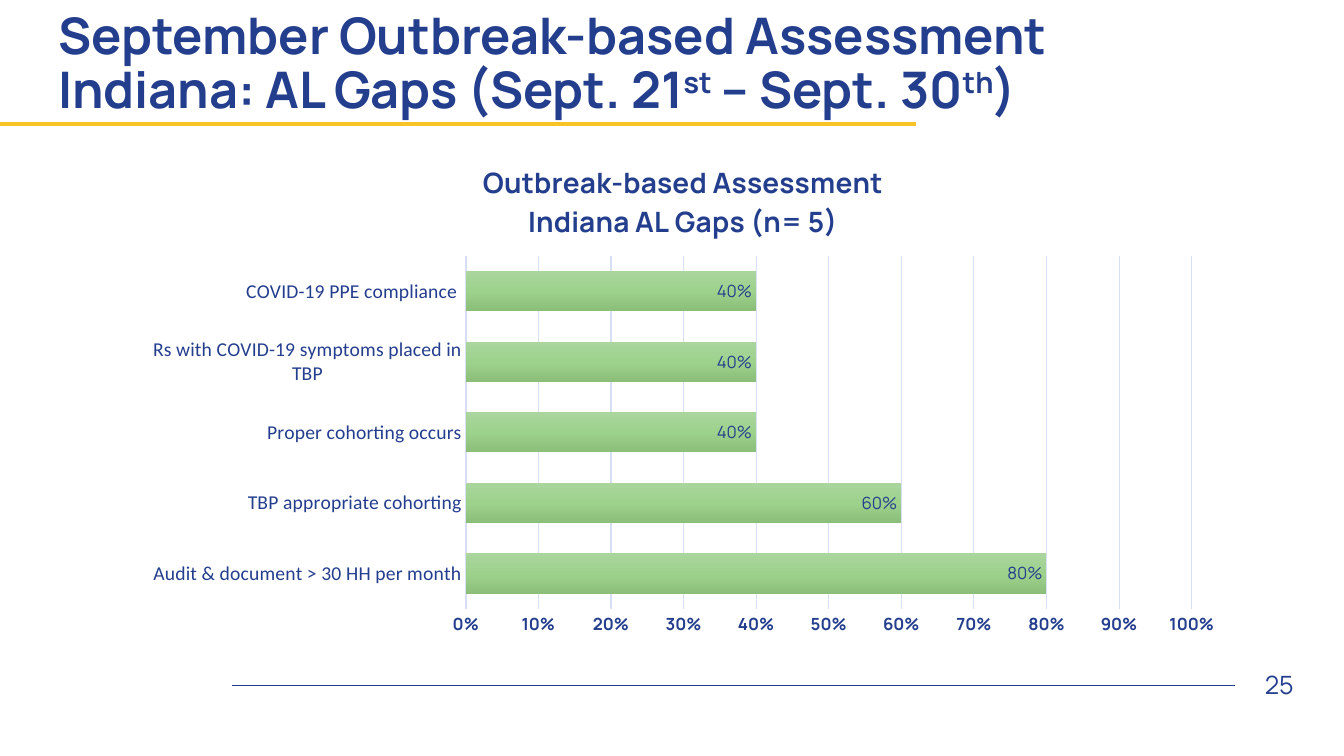
from lxml import etree
from pptx import Presentation
from pptx.chart.data import CategoryChartData
from pptx.dml.color import RGBColor
from pptx.enum.chart import XL_CHART_TYPE, XL_LABEL_POSITION, XL_TICK_MARK
from pptx.enum.shapes import MSO_CONNECTOR
from pptx.enum.text import MSO_ANCHOR, MSO_AUTO_SIZE, PP_ALIGN
from pptx.oxml import parse_xml
from pptx.oxml.ns import nsdecls, qn
from pptx.util import Inches, Pt

BAR = XL_CHART_TYPE.BAR_CLUSTERED
INSIDE = XL_LABEL_POSITION.INSIDE_END
NO_TICK = XL_TICK_MARK.NONE
STRAIGHT = MSO_CONNECTOR.STRAIGHT
MIDDLE = MSO_ANCHOR.MIDDLE
NO_FIT = MSO_AUTO_SIZE.NONE
LEFT, RIGHT = PP_ALIGN.LEFT, PP_ALIGN.RIGHT

NAVY, GOLD, PALE = "243E8E", "F7C327", "D7DFF5"
GREENS = [(0, "AAD59D"), (50, "9DD28D"), (100, "8ABE79")]
DARK_GREENS = [(0, "74B35C"), (50, "5EAD38"), (100, "529F2D")]
WIDE, HIGH = 10.96, 5  # chart size in inches
GAPS = [
    ("Audit & document > 30 HH per month", 0.8),
    ("TBP appropriate cohorting", 0.6),
    ("Proper cohorting occurs", 0.4),
    ("Rs with COVID-19 symptoms placed in TBP", 0.4),
    ("COVID-19 PPE compliance ", 0.4),
]


def color(code):
    return RGBColor.from_string(code)


def style(font, size, bold=False, name="Manrope"):
    font.name, font.size, font.bold = name, Pt(size), bold
    font.color.rgb = color(NAVY)


def stroke(line, code, width):
    line.color.rgb = color(code)
    line.width = Pt(width)


def add_rule(slide, left, right, top, code, width):
    rule = slide.shapes.add_connector(
        STRAIGHT, Inches(left), Inches(top), Inches(right), Inches(top))
    stroke(rule.line, code, width)
    etree.SubElement(rule._element.spPr, qn("a:effectLst"))


def add_title(slide):
    title = slide.shapes.title
    title.left, title.top = Inches(0.48), Inches(0.23)
    title.width, title.height = Inches(11.94), Inches(0.83)
    frame = title.text_frame
    frame.word_wrap, frame.auto_size = True, NO_FIT
    frame.vertical_anchor = MIDDLE
    para = frame.paragraphs[0]
    para.alignment, para.line_spacing = LEFT, 0.9
    para.add_run().text = "September Outbreak-based Assessment"
    para.add_line_break()
    parts = ["Indiana: AL Gaps (Sept. 21", "st", " – Sept. 30", "th", ")"]
    for index, text in enumerate(parts):
        run = para.add_run()
        run.text = text
        if index % 2:  # ordinal endings are raised
            run.font._element.set("baseline", "30000")
    style(para.font, 36, True)


def add_number(slide):
    box = slide.shapes.add_textbox(
        Inches(12.25), Inches(6.59), Inches(0.68), Inches(0.4))
    frame = box.text_frame
    frame.word_wrap, frame.vertical_anchor = True, MIDDLE
    para = frame.paragraphs[0]
    para.text, para.alignment = "25", RIGHT
    style(para.font, 18)


def place(parent, index, **sizes):
    """Fix a chart part at inches from the chart's corner."""
    for old in parent.findall(qn("c:layout")):
        parent.remove(old)
    layout = etree.Element(qn("c:layout"))
    manual = etree.SubElement(layout, qn("c:manualLayout"))
    if "w" in sizes:
        etree.SubElement(manual, qn("c:layoutTarget")).set("val", "inner")
    for key in "xy":
        etree.SubElement(manual, qn(f"c:{key}Mode")).set("val", "edge")
    for key, value in sizes.items():
        part = value / (WIDE if key in "xw" else HIGH)
        etree.SubElement(manual, qn(f"c:{key}")).set("val", str(part))
    parent.insert(index, layout)


def shade(bars, stops):
    marks = "".join(
        f'<a:gs pos="{spot * 1000}"><a:srgbClr val="{code}"/></a:gs>'
        for spot, code in stops)
    bars.format.line.fill.background()
    bars._element.get_or_add_spPr().insert(0, parse_xml(
        f'<a:gradFill {nsdecls("a")} rotWithShape="1"><a:gsLst>{marks}</a:gsLst>'
        '<a:lin ang="5400000" scaled="0"/></a:gradFill>'))


def add_chart(slide):
    data = CategoryChartData(number_format="0%")
    data.categories = [name for name, _ in GAPS]
    data.add_series("Series 1", [])
    data.add_series("Series 2", [value for _, value in GAPS])
    chart = slide.shapes.add_chart(
        BAR, Inches(1.29), Inches(1.42), Inches(WIDE), Inches(HIGH), data).chart
    style(chart.font, 12, True)
    chart.has_legend = False

    # Heading
    chart.has_title = True
    frame = chart.chart_title.text_frame
    frame.text = "Outbreak-based Assessment\nIndiana AL Gaps (n= 5)"
    for para in frame.paragraphs:
        style(para.font, 20, True)
    place(chart.chart_title._element, 1, x=3.47, y=0.15)
    place(chart._chartSpace.chart.plotArea, 0, x=3.33, y=1.12, w=7.2, h=3.5)

    # Axes
    names, scale = chart.category_axis, chart.value_axis
    for axis in (names, scale):
        axis.major_tick_mark = axis.minor_tick_mark = NO_TICK
    style(names.tick_labels.font, 14, name="Calibri")
    stroke(names.format.line, PALE, 1)
    style(scale.tick_labels.font, 12, True)
    scale.tick_labels.number_format = "0%"
    scale.tick_labels.number_format_is_linked = False
    scale.minimum_scale, scale.maximum_scale, scale.major_unit = 0, 1, 0.1
    scale.format.line.fill.background()
    stroke(scale.major_gridlines.format.line, PALE, 0.75)

    # Bars and their labels
    plot = chart.plots[0]
    plot.gap_width, plot.overlap, plot.vary_by_categories = 75, 40, False
    for bars, stops in zip(plot.series, (DARK_GREENS, GREENS)):
        shade(bars, stops)
    labels = plot.series[1].data_labels
    labels.show_value, labels.position = True, INSIDE
    labels.number_format, labels.number_format_is_linked = "0%", False
    style(labels.font, 12)


def main():
    deck = Presentation()
    deck.slide_width, deck.slide_height = Inches(13.33), Inches(7.5)
    slide = deck.slides.add_slide(deck.slide_layouts[5])
    add_rule(slide, 2.3, 12.25, 6.8, NAVY, 1)
    add_rule(slide, -0.11, 9.09, 1.23, GOLD, 3)
    add_title(slide)
    add_number(slide)
    add_chart(slide)
    deck.save("out.pptx")


if __name__ == "__main__":
    main()
